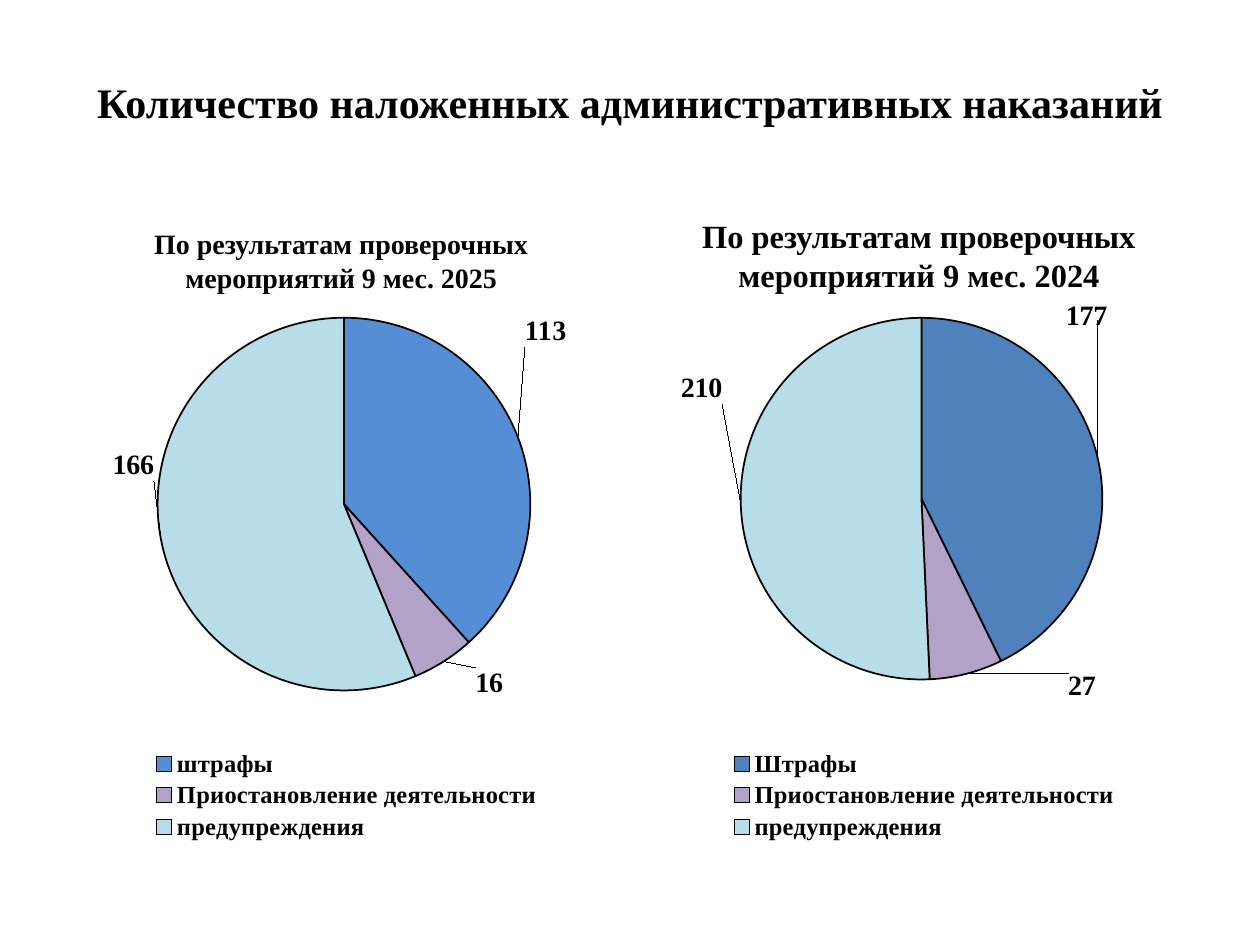
"""Build a slide comparing administrative penalties in two pie charts."""
import pptx
import pptx.chart.data
import pptx.dml.color
import pptx.enum.chart
import pptx.enum.text
import pptx.oxml
import pptx.oxml.ns
import pptx.util

Pt = pptx.util.Pt
RGBColor = pptx.dml.color.RGBColor
BLACK = RGBColor(0x00, 0x00, 0x00)
BRIGHT_BLUE = RGBColor(0x55, 0x8E, 0xD5)
STEEL_BLUE = RGBColor(0x4F, 0x81, 0xBD)
LILAC = RGBColor(0xB3, 0xA2, 0xC7)
PALE_BLUE = RGBColor(0xB7, 0xDE, 0xE8)
SERIF = "Times New Roman"
COLUMN_WIDTH = 318


def set_font(font, size):
    font.name = SERIF
    font.size = Pt(size)
    font.bold = True
    font.color.rgb = BLACK


def fill_placeholder(sp, box, text, size, anchor):
    sp.left, sp.top, sp.width, sp.height = map(Pt, box)
    tf = sp.text_frame
    tf.word_wrap = True
    tf.auto_size = pptx.enum.text.MSO_AUTO_SIZE.NONE
    tf.vertical_anchor = anchor
    p = tf.paragraphs[0]
    p.alignment = pptx.enum.text.PP_ALIGN.CENTER
    r = p.add_run()
    r.text = text
    set_font(r.font, size)


def make_layout(x, y, w=None, h=None, inner=False):
    parts = ['<c:layoutTarget val="inner"/>'] if inner else []
    if w is not None:
        parts += ['<c:xMode val="edge"/>', '<c:yMode val="edge"/>']
    sides = zip("xywh", (x, y, w, h))
    parts += [f'<c:{k} val="{v}"/>' for k, v in sides if v is not None]
    ns = pptx.oxml.ns.nsdecls("c")
    return pptx.oxml.parse_xml(
        f'<c:layout {ns}><c:manualLayout>{"".join(parts)}</c:manualLayout></c:layout>')


def style_point(point, color, offset):
    point.format.fill.solid()
    point.format.fill.fore_color.rgb = color
    point.format.line.color.rgb = BLACK
    point.format.line.width = Pt(1)
    label = point.data_label
    set_font(label.font, 16)
    label.position = pptx.enum.chart.XL_LABEL_POSITION.OUTSIDE_END
    dlbl = label._get_or_add_dLbl()
    dlbl.insert(1, make_layout(*offset))


def add_pie(s, left, categories, values, colors, plot_box, offsets):
    data = pptx.chart.data.CategoryChartData()
    data.categories = categories
    data.add_series("Series 1", values)
    frame = s.shapes.add_chart(pptx.enum.chart.XL_CHART_TYPE.PIE, Pt(left), Pt(171.5),
                               Pt(COLUMN_WIDTH), Pt(311), data)
    chart = frame.chart
    chart.has_title = False
    chart.font.name = "Calibri"
    chart.font.size = Pt(10)
    chart.font.color.rgb = BLACK
    chart.has_legend = True
    legend = chart.legend
    legend.position = pptx.enum.chart.XL_LEGEND_POSITION.BOTTOM
    legend.include_in_layout = False
    set_font(legend.font, 14)
    for old in legend._element.xpath("c:layout"):
        legend._element.remove(old)
    legend._element.insert(1, make_layout(0.15, 0.82, 0.72, 0.18))
    area = chart._chartSpace.xpath("c:chart/c:plotArea")[0]
    for old in area.xpath("c:layout"):
        area.remove(old)
    area.insert(0, make_layout(*plot_box, inner=True))
    plot = chart.plots[0]
    plot.vary_by_categories = True
    for i, (color, offset) in enumerate(zip(colors, offsets)):
        style_point(plot.series[0].points[i], color, offset)


def main():
    prs = pptx.Presentation()
    prs.slide_width, prs.slide_height = Pt(720), Pt(540)
    s = prs.slides.add_slide(prs.slide_layouts[4])
    title, left_head, left_body, right_head, right_body = s.placeholders
    for sp in (left_body, right_body):
        sp._element.getparent().remove(sp._element)

    anchors = pptx.enum.text.MSO_ANCHOR
    fill_placeholder(title, (36, 21.5, 648, 73),
                     "Количество наложенных административных наказаний", 24, anchors.MIDDLE)
    columns = [
        (left_head, 36, "2025", 16, "штрафы ", (113, 16, 166), BRIGHT_BLUE,
         (0.17, 0.03, 0.67, 0.69), [(0, -0.16), (0.05, 0), (0, -0.17)]),
        (right_head, 366, "2024", 18.5, "Штрафы", (177, 27, 210), STEEL_BLUE,
         (0.18, 0.03, 0.65, 0.67), [(-0.07, -0.25), (0.18, -0.02), (-0.02, -0.21)]),
    ]
    for head, left, year, size, fines, values, color, plot_box, offsets in columns:
        fill_placeholder(head, (left, 121, COLUMN_WIDTH, 50.5),
                         f"По результатам проверочных мероприятий 9 мес. {year}",
                         size, anchors.BOTTOM)
        add_pie(s, left, (fines, "Приостановление деятельности", "предупреждения"), values,
                (color, LILAC, PALE_BLUE), plot_box, offsets)
    prs.save("out.pptx")


if __name__ == "__main__":
    main()
